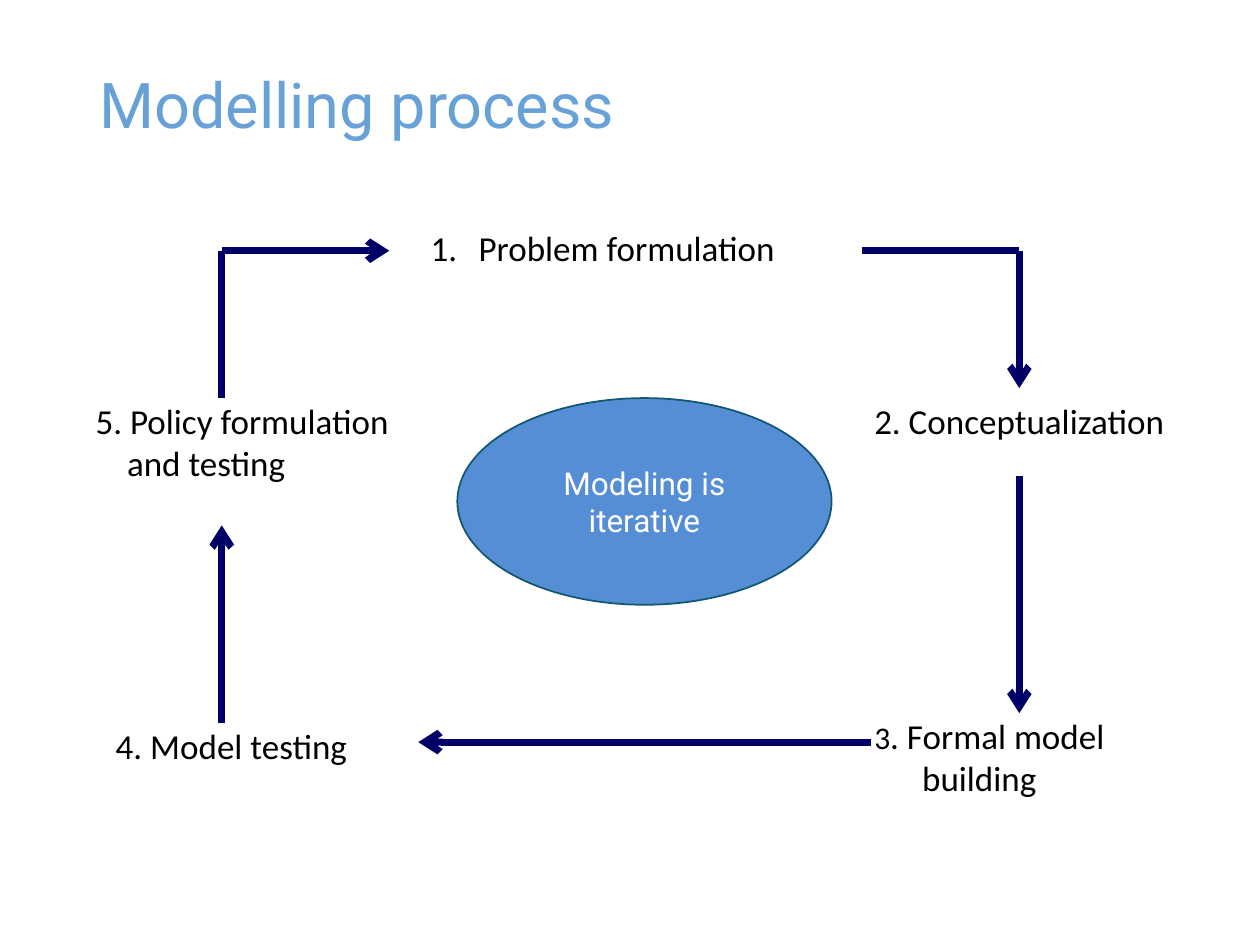
from dataclasses import dataclass

import pptx
import pptx.dml.color
import pptx.enum.shapes
import pptx.enum.text
import pptx.oxml
import pptx.oxml.ns
import pptx.util

COLUMNS, ROWS = 100, 75
COLORS = {
    "title": "68A1D7",
    "step": "000000",
    "arrow": "000066",
    "ellipse": "558ED5",
    "outline": "125770",
    "ellipse_text": "FFFFFF",
}
HANGING = 3.8  # columns
LEFT, RIGHT, TOP, BOTTOM = 17.6, 80.9, 19.9, 58.9  # sides of the loop
STEP_WIDTH = 35.9

presentation = pptx.Presentation()
presentation.slide_width = pptx.util.Inches(10)
presentation.slide_height = pptx.util.Inches(7.5)
slide = presentation.slides.add_slide(presentation.slide_layouts[6])


@dataclass
class Line:
    """One line of a step; margin and indent are in columns."""
    runs: list[tuple[str, int]]
    margin: float = HANGING
    indent: float = -HANGING
    numbered: bool = False


@dataclass
class Step:
    column: float
    row: float
    width: float
    height: float
    lines: list[Line]


@dataclass
class Segment:
    start: tuple[float, float]
    end: tuple[float, float]
    arrow: bool = True


STEPS = [
    Step(33.2, 17.5, 39.1, 7.4, [Line([("Problem formulation", 20)], numbered=True)]),
    Step(6.6, 31.2, STEP_WIDTH, 10.8, [
        Line([("5. Policy formulation", 20)]),
        Line([("and testing", 20)], margin=2.5, indent=0),
    ]),
    Step(68.4, 31.2, STEP_WIDTH, 7.4, [Line([("2. Conceptualization", 20)])]),
    Step(68.4, 56.2, STEP_WIDTH, 10.8, [
        Line([("3", 18), (". Formal model", 20)]),
        Line([("building", 20)], indent=0),
    ]),
    Step(8.2, 57, STEP_WIDTH, 7.4, [Line([("4. Model testing", 20)])]),
]
SEGMENTS = [
    Segment((LEFT, 31.6), (LEFT, TOP), arrow=False),
    Segment((LEFT, TOP), (30.9, TOP)),
    Segment((68.4, TOP), (RIGHT, TOP), arrow=False),
    Segment((RIGHT, TOP), (RIGHT, 30.8)),
    Segment((RIGHT, 37.8), (RIGHT, 56.6)),
    Segment((69.1, BOTTOM), (33.2, BOTTOM)),
    Segment((LEFT, 57.4), (LEFT, 41.7)),
]


def across(columns: float) -> int:
    return round(presentation.slide_width * columns / COLUMNS)


def down(rows: float) -> int:
    return round(presentation.slide_height * rows / ROWS)


def color(name: str) -> pptx.dml.color.RGBColor:
    return pptx.dml.color.RGBColor.from_string(COLORS[name])


def add_run(paragraph, text: str, size: int, font: str, color_name: str) -> None:
    run = paragraph.add_run()
    run.text = text
    for name, value in {"name": font, "size": pptx.util.Pt(size)}.items():
        setattr(run.font, name, value)
    run.font.color.rgb = color(color_name)


def add_text_box(column: float, row: float, width: float, height: float):
    shape = slide.shapes.add_textbox(across(column), down(row), across(width), down(height))
    shape.text_frame.word_wrap = True
    return shape.text_frame


def add_step(step: Step) -> None:
    frame = add_text_box(step.column, step.row, step.width, step.height)
    for index, line in enumerate(step.lines):
        paragraph = frame.add_paragraph() if index else frame.paragraphs[0]
        properties = paragraph._p.get_or_add_pPr()
        properties.set("marL", str(across(line.margin)))
        properties.set("indent", str(across(line.indent)))
        if line.numbered:
            number = pptx.oxml.parse_xml(
                f'<a:buAutoNum {pptx.oxml.ns.nsdecls("a")} type="arabicPeriod"/>')
            properties.append(number)
        for text, size in line.runs:
            add_run(paragraph, text, size, "Calibri", "step")


def add_segment(segment: Segment) -> None:
    connector = slide.shapes.add_connector(
        pptx.enum.shapes.MSO_CONNECTOR.STRAIGHT,
        across(segment.start[0]), down(segment.start[1]),
        across(segment.end[0]), down(segment.end[1]))
    connector.line.color.rgb = color("arrow")
    connector.line.width = pptx.util.Pt(4)
    namespace = pptx.oxml.ns.nsdecls("a")
    if segment.arrow:
        connector.line._get_or_add_ln().append(
            pptx.oxml.parse_xml(f'<a:tailEnd {namespace} type="arrow"/>'))
    connector._element.spPr.append(pptx.oxml.parse_xml(f"<a:effectLst {namespace}/>"))


def add_center() -> None:
    shape = slide.shapes.add_shape(
        pptx.enum.shapes.MSO_SHAPE.OVAL, across(36.3), down(31.6), across(29.7), down(16.4))
    shape.shadow.inherit = False
    shape.fill.solid()
    shape.fill.fore_color.rgb = color("ellipse")
    shape.line.color.rgb = color("outline")
    shape.line.width = pptx.util.Pt(1)
    frame = shape.text_frame
    frame.word_wrap = True
    frame.vertical_anchor = pptx.enum.text.MSO_ANCHOR.MIDDLE
    paragraph = frame.paragraphs[0]
    paragraph.alignment = pptx.enum.text.PP_ALIGN.CENTER
    add_run(paragraph, "Modeling is iterative", 18, "Roboto", "ellipse_text")


def add_title() -> None:
    frame = add_text_box(6.9, 5.3, 75, 6.5)
    frame.vertical_anchor = pptx.enum.text.MSO_ANCHOR.BOTTOM
    frame.paragraphs[0].line_spacing = 0.9
    add_run(frame.paragraphs[0], "Modelling process", 36, "Roboto", "title")


def main() -> None:
    for step in STEPS:
        add_step(step)
    for segment in SEGMENTS:
        add_segment(segment)
    add_center()
    add_title()
    presentation.save("out.pptx")


if __name__ == "__main__":
    main()
